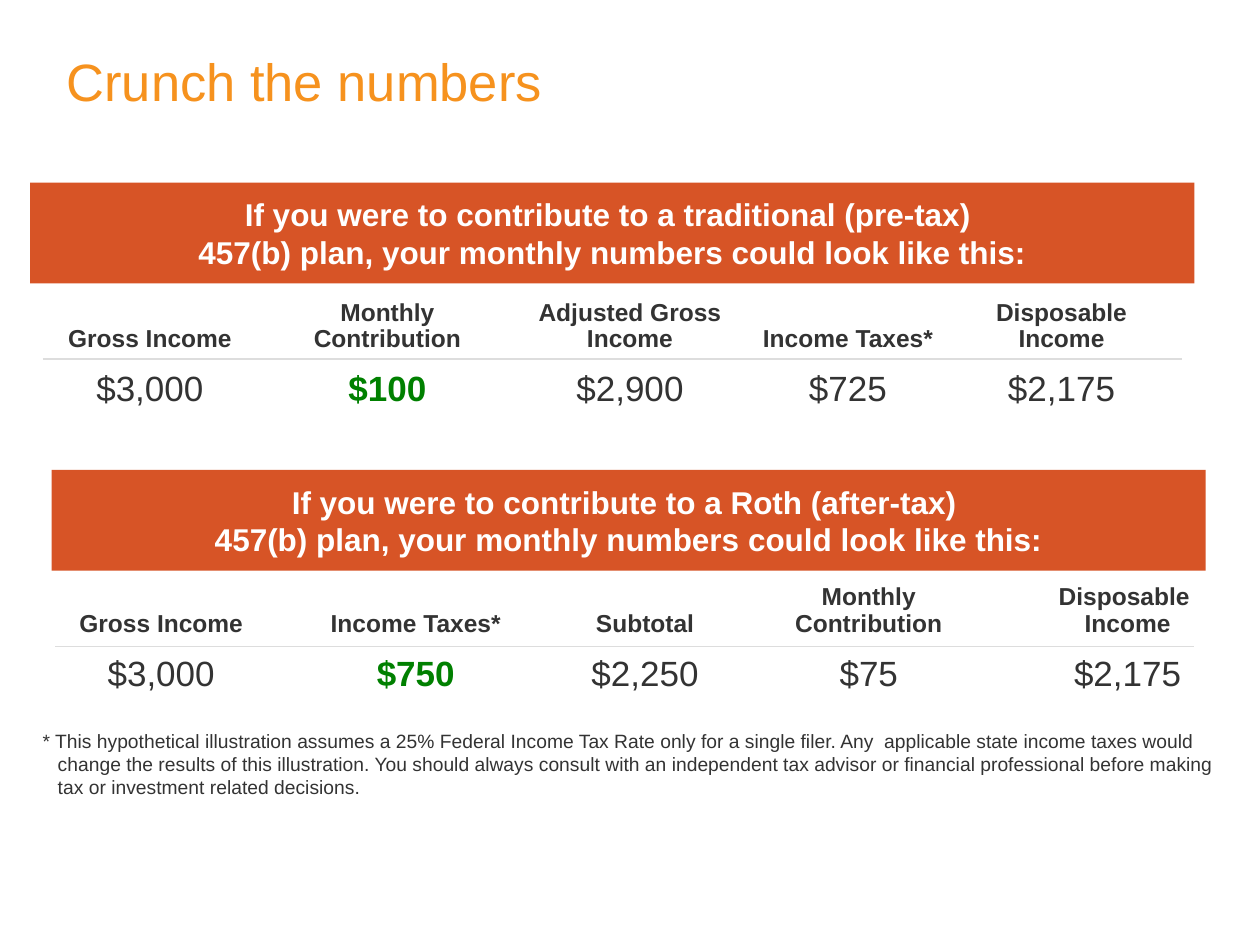
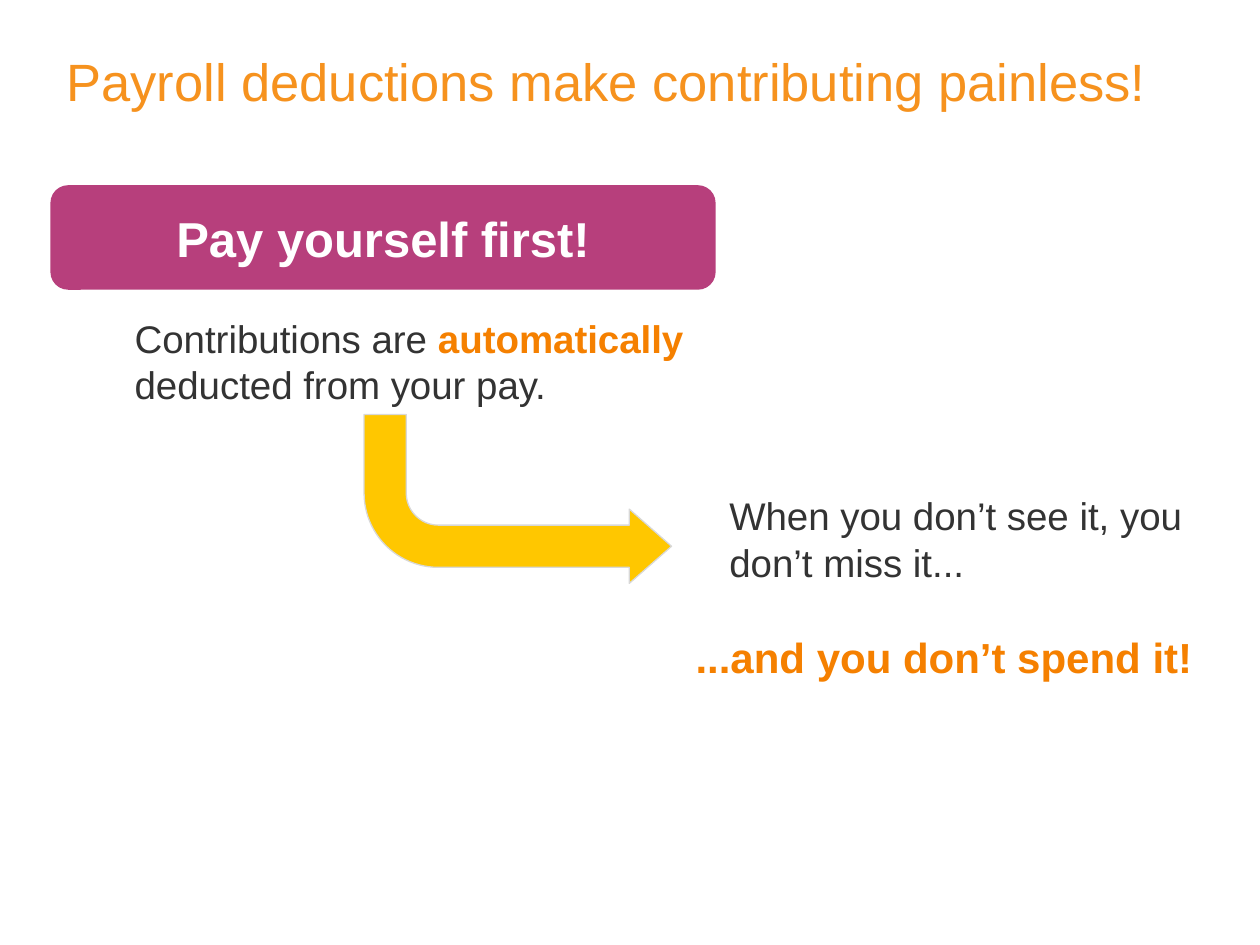
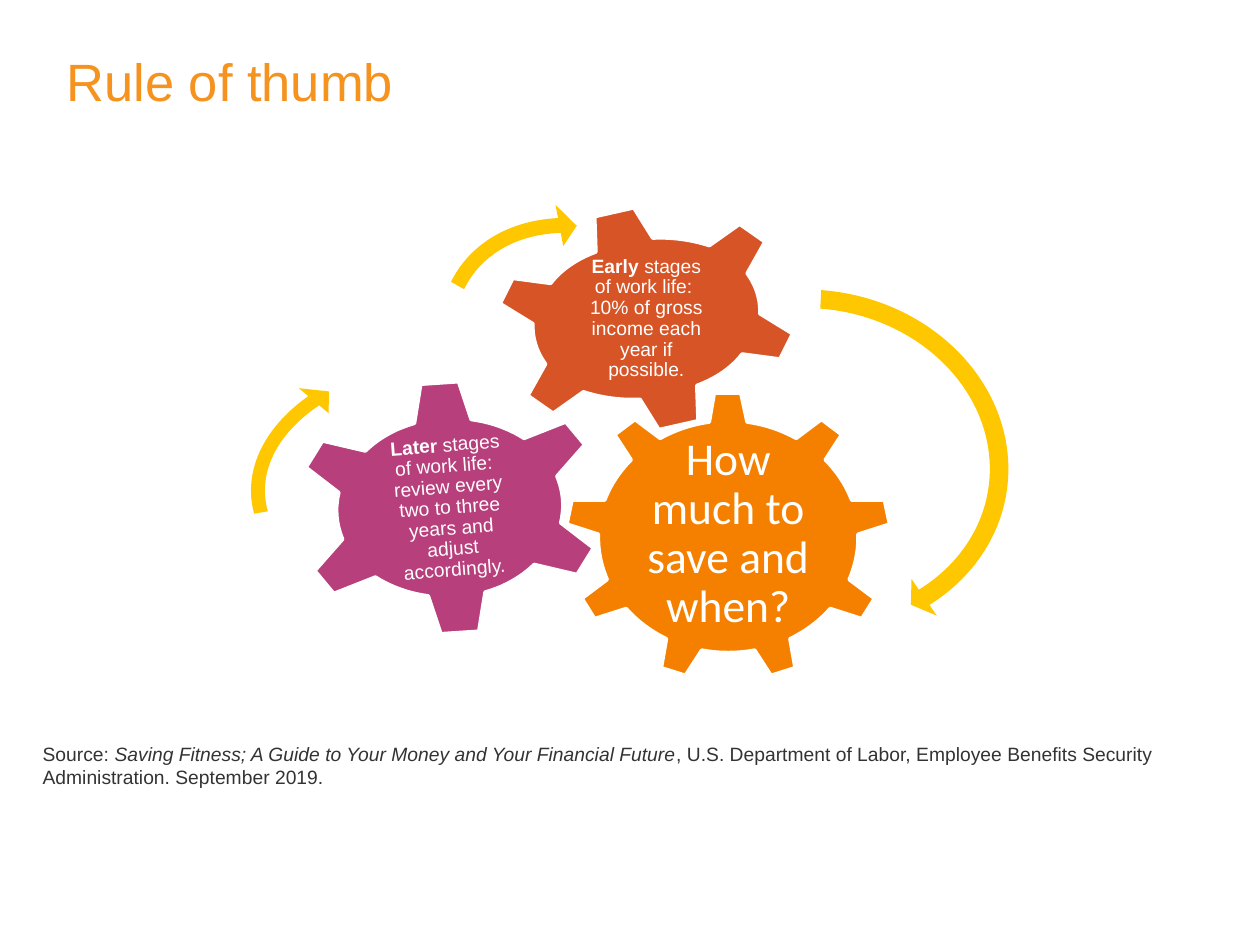
from dataclasses import dataclass
from math import atan2, cos, hypot, pi, radians, sin
from typing import NamedTuple

from lxml.etree import SubElement
from pptx import Presentation
from pptx.dml.color import RGBColor
from pptx.enum.shapes import MSO_CONNECTOR, MSO_SHAPE
from pptx.enum.text import MSO_ANCHOR, PP_ALIGN
from pptx.oxml.ns import qn
from pptx.shapes.autoshape import Shape
from pptx.slide import Slide
from pptx.util import Inches, Pt

TITLE_ORANGE = "F6921E"
ORANGE = "F58000"
RUST = "D75426"
MAGENTA = "B73F7C"
YELLOW = "FFC700"
GREEN = "008000"
CHARCOAL = "333333"
WHITE = "FFFFFF"
RULE_GRAY = "DDDDDD"
ARROW_EDGE = "D8D8D8"

BODY = {"name": "Arial", "size": Pt(22), "color": CHARCOAL}
TITLE = BODY | {"size": Pt(30), "color": TITLE_ORANGE}
BANNER = BODY | {"size": Pt(18), "bold": True, "color": WHITE}
CALLOUT = BANNER | {"size": Pt(28)}
HEADING = BODY | {"size": Pt(14), "bold": True}
AMOUNT = BODY | {"size": Pt(20)}
NOTE = BODY | {"size": Pt(11)}
GEAR_NOTE = NOTE | {"color": WHITE}
GEAR_QUESTION = GEAR_NOTE | {"name": "Calibri", "size": Pt(26)}
EMPHASIS = {"bold": True, "color": ORANGE}

CENTERED = {"alignment": PP_ALIGN.CENTER}
CENTERED_TIGHT = CENTERED | {"line_spacing": 0.9}
MIDDLE = {"vertical_anchor": MSO_ANCHOR.MIDDLE}
EVEN_MARGINS = {
    f"margin_{side}": Inches(0.1) for side in ("left", "top", "right", "bottom")
}

Point = tuple[float, float]
Tooth = list[Point]


class Box(NamedTuple):
    """A place on the slide in inches."""

    left: float
    top: float
    width: float
    height: float

    def lengths(self) -> list[int]:
        """Return the four measures as lengths."""
        return [Inches(value) for value in self]


class Span(NamedTuple):
    """A piece of text and what sets its format apart."""

    text: str
    changes: dict = {}


@dataclass
class Column:
    """One income figure with its heading."""

    heading: str
    amount: str
    heading_lines: int = 1
    highlighted: bool = False


@dataclass
class IncomePanel:
    """A banner above a row of income figures."""

    banner_text: str
    banner: Box
    edges: list[float]
    amount_top: float
    rule_left: float
    rule_top: float
    columns: list[Column]


@dataclass
class Gear:
    """A toothed wheel with text in its middle."""

    center: Point
    radii: Point
    teeth: list[Tooth]
    fill: str
    text_width: float
    spans: list[Span]
    text_format: dict
    tilt: float = 0


@dataclass
class TurnArrow:
    """A circular arrow beside a gear."""

    box: Box
    rotation: float
    adjustments: list[float]


def rgb(color: str) -> RGBColor:
    """Turn a hex string into a colour."""
    return RGBColor.from_string(color)


def set_values(target: object, values: dict) -> None:
    """Set each named attribute of the target."""
    for name, value in values.items():
        if name == "color":
            target.color.rgb = rgb(value)
        else:
            setattr(target, name, value)


def write(shape: Shape, spans: list[Span], text_format: dict,
          layout: dict = {}, frame: dict = {}) -> None:
    """Fill a shape with formatted spans in one paragraph."""
    set_values(shape.text_frame, {"word_wrap": True} | frame)
    paragraph = shape.text_frame.paragraphs[0]
    set_values(paragraph, layout)
    for span in spans:
        for number, line in enumerate(span.text.split("\n")):
            if number:
                paragraph.add_line_break()
            run = paragraph.add_run()
            run.text = line
            set_values(run.font, text_format | span.changes)


def add_text(slide: Slide, box: Box, spans: list[Span], text_format: dict,
             layout: dict = {}, frame: dict = {}) -> Shape:
    """Add a text box."""
    shape = slide.shapes.add_textbox(*box.lengths())
    write(shape, spans, text_format, layout, frame)
    return shape


def paint(shape: Shape, fill: str, line: str = "", line_width: float = 0.75) -> None:
    """Give a shape a flat fill and an optional line."""
    shape.shadow.inherit = False
    shape.fill.solid()
    shape.fill.fore_color.rgb = rgb(fill)
    if line:
        shape.line.color.rgb = rgb(line)
        shape.line.width = Pt(line_width)
    else:
        shape.line.fill.background()


def add_preset(slide: Slide, kind: MSO_SHAPE, box: Box, fill: str, line: str = "",
               adjustments: list[float] = [], rotation: float = 0) -> Shape:
    """Add a painted preset shape."""
    shape = slide.shapes.add_shape(kind, *box.lengths())
    paint(shape, fill, line)
    shape.rotation = rotation
    for index, value in enumerate(adjustments):
        shape.adjustments[index] = value
    return shape


def add_titled_slide(presentation: Presentation, title: str) -> Slide:
    """Add a blank slide with the shared title style."""
    slide = presentation.slides.add_slide(presentation.slide_layouts[6])
    add_text(slide, Box(0.43, 0.25, 9, 0.78), [Span(title)], TITLE, frame=MIDDLE)
    return slide


def add_rule(slide: Slide, left: float, top: float) -> None:
    """Add the thin line between headings and amounts."""
    ends = [Inches(value) for value in (left, top, left + 9.04, top)]
    rule = slide.shapes.add_connector(MSO_CONNECTOR.STRAIGHT, *ends)
    rule.line.color.rgb = rgb(RULE_GRAY)
    rule.line.width = Pt(0.75)
    SubElement(rule._element.spPr, qn("a:effectLst"))


def add_income_panel(slide: Slide, panel: IncomePanel) -> None:
    """Draw a banner with its headings, rule and amounts."""
    banner = add_preset(slide, MSO_SHAPE.RECTANGLE, panel.banner, RUST)
    write(banner, [Span(panel.banner_text)], BANNER, CENTERED,
          EVEN_MARGINS | {"vertical_anchor": MSO_ANCHOR.TOP})
    for column, left, right in zip(panel.columns, panel.edges, panel.edges[1:]):
        width = right - left
        heading_height = 0.15 + 0.21 * column.heading_lines
        heading_box = Box(left, panel.amount_top - heading_height, width, heading_height)
        add_text(slide, heading_box, [Span(column.heading)], HEADING,
                 CENTERED_TIGHT, EVEN_MARGINS)
        changes = {"bold": True, "color": GREEN} if column.highlighted else {}
        add_text(slide, Box(left, panel.amount_top, width, 0.54),
                 [Span(column.amount, changes)], AMOUNT, CENTERED_TIGHT, EVEN_MARGINS)
    add_rule(slide, panel.rule_left, panel.rule_top)


def with_opposites(teeth: list[Tooth], center: Point) -> list[Tooth]:
    """Add the same teeth turned half way round the centre."""
    x, y = center
    return teeth + [[(2 * x - px, 2 * y - py) for px, py in tooth] for tooth in teeth]


def with_mirrored(top: Tooth, right: list[Tooth], center: Point) -> list[Tooth]:
    """Add the right-hand teeth mirrored to the left."""
    x = center[0]
    left = [[(2 * x - px, py) for px, py in reversed(tooth)] for tooth in reversed(right)]
    return [top, *right, *left]


def rim(gear: Gear, start: Point, end: Point, steps: int = 10) -> list[Point]:
    """Return points along the gear body between two teeth."""
    (x, y), (radius_x, radius_y) = gear.center, gear.radii
    scaled = [((px - x) / radius_x, (py - y) / radius_y) for px, py in (start, end)]
    first, last = (atan2(py, px) for px, py in scaled)
    sweep = (last - first) % (2 * pi)
    near, far = (hypot(*point) for point in scaled)
    points = []
    for step in range(1, steps):
        share = step / steps
        reach = near + (far - near) * share
        angle = first + sweep * share
        points.append((x + radius_x * reach * cos(angle), y + radius_y * reach * sin(angle)))
    return points


def turn(point: Point, center: Point, degrees: float) -> Point:
    """Turn a point round a centre."""
    across, down = point[0] - center[0], point[1] - center[1]
    cosine, sine = cos(radians(degrees)), sin(radians(degrees))
    return (center[0] + across * cosine - down * sine,
            center[1] + across * sine + down * cosine)


def add_gear(slide: Slide, gear: Gear) -> None:
    """Draw a gear and its text."""
    outline = []
    for tooth, following in zip(gear.teeth, gear.teeth[1:] + gear.teeth[:1]):
        outline += tooth + rim(gear, tooth[-1], following[0])
    level = [turn(point, gear.center, -gear.tilt) for point in outline]
    vertices = [(Inches(x), Inches(y)) for x, y in level]
    builder = slide.shapes.build_freeform(*vertices[0])
    builder.add_line_segments(vertices[1:], close=True)
    shape = builder.convert_to_shape()
    paint(shape, gear.fill, WHITE, 2)
    shape.rotation = gear.tilt
    side = (shape.width - Inches(gear.text_width)) // 2
    margins = {"margin_left": side, "margin_right": side,
               "margin_top": 0, "margin_bottom": 0}
    write(shape, gear.spans, gear.text_format, CENTERED_TIGHT, MIDDLE | margins)


def build_numbers(presentation: Presentation) -> None:
    """Build the slide that compares the two plans."""
    slide = add_titled_slide(presentation, "Crunch the numbers")
    promise = "457(b) plan, your monthly numbers could look like this:"
    panels = [
        IncomePanel(
            f"If you were to contribute to a traditional (pre-tax) \n{promise}",
            Box(0.24, 1.45, 9.24, 0.8), [0.29, 2.09, 4.06, 5.94, 7.52, 9.33],
            2.85, 0.34, 2.85,
            [Column("Gross Income", "$3,000"),
             Column("Monthly Contribution", "$100", 2, True),
             Column("Adjusted Gross Income", "$2,900", 2),
             Column("Income Taxes*", "$725"),
             Column("Disposable Income", "$2,175", 2)]),
        IncomePanel(
            f"If you were to contribute to a Roth (after-tax) \n{promise}",
            Box(0.41, 3.73, 9.16, 0.8), [0.31, 2.25, 4.35, 5.89, 7.9, 10],
            5.11, 0.44, 5.13,
            [Column("Gross Income", "$3,000"),
             Column("Income Taxes*", "$750", 1, True),
             Column("Subtotal", "$2,250"),
             Column("Monthly Contribution", "$75", 2),
             Column("Disposable \nIncome", "$2,175", 2)]),
    ]
    for panel in panels:
        add_income_panel(slide, panel)
    footnote = add_text(slide, Box(0.24, 5.74, 9.6, 0.66), [Span(
        "* This hypothetical illustration assumes a 25% Federal Income Tax Rate only "
        "for a single filer. Any  applicable state income taxes would change the "
        "results of this illustration. You should always consult with an independent "
        "tax advisor or financial professional before making tax or investment "
        "related decisions.")], NOTE)
    properties = footnote.text_frame.paragraphs[0]._p.get_or_add_pPr()
    for name, indent in {"marL": 0.12, "indent": -0.12}.items():
        properties.set(name, str(Inches(indent)))


def build_payroll(presentation: Presentation) -> None:
    """Build the slide on payroll deductions."""
    slide = add_titled_slide(presentation, "Payroll deductions make contributing painless!")
    callout = add_preset(slide, MSO_SHAPE.ROUNDED_RECTANGLE, Box(0.4, 1.47, 5.28, 0.83),
                         MAGENTA, adjustments=[0.17])
    write(callout, [Span("Pay yourself first!")], CALLOUT, CENTERED,
          EVEN_MARGINS | MIDDLE | {"word_wrap": False})
    add_text(slide, Box(0.97, 2.45, 5.18, 0.83),
             [Span("Contributions are "), Span("automatically ", EMPHASIS),
              Span("deducted from your pay.")], BODY)
    arrow = add_preset(slide, MSO_SHAPE.BENT_ARROW, Box(2.89, 3.29, 2.44, 1.34), YELLOW,
                       ARROW_EDGE, [0.25, 0.22, 0.25, 0.44], 180)
    arrow._element.spPr.get_or_add_xfrm().set("flipH", "1")
    add_text(slide, Box(5.69, 3.86, 4.31, 0.83),
             [Span("When you don’t see it, you don’t miss it...")], BODY)
    add_text(slide, Box(5.33, 4.96, 4.47, 0.5), [Span(" ...and you don’t spend it!")],
             BODY | EMPHASIS | {"size": Pt(24)})


def build_rule_of_thumb(presentation: Presentation) -> None:
    """Build the slide with the three savings gears."""
    slide = add_titled_slide(presentation, "Rule of thumb")
    add_text(slide, Box(0.24, 5.84, 9.44, 0.47), [
        Span("Source: "),
        Span("Saving Fitness; A Guide to Your Money and Your Financial Future",
             {"italic": True}),
        Span(", U.S. Department of Labor, Employee Benefits Security Administration. "
             "September 2019.")], NOTE)
    question_center, later_center, early_center = (5.78, 4.26), (3.57, 4.03), (5.13, 2.53)
    question_teeth = with_mirrored(
        [(5.63, 3.35), (5.67, 3.12), (5.88, 3.12), (5.93, 3.35)],
        [[(6.32, 3.48), (6.52, 3.33), (6.68, 3.45), (6.55, 3.65)],
         [(6.76, 3.97), (7.02, 3.97), (7.06, 4.16), (6.81, 4.24)],
         [(6.74, 4.6), (6.94, 4.75), (6.84, 4.91), (6.59, 4.83)],
         [(6.27, 5.07), (6.31, 5.3), (6.12, 5.36), (5.99, 5.16)]], question_center)
    later_teeth = with_opposites(
        [[(4.16, 3.48), (4.49, 3.35), (4.64, 3.53), (4.42, 3.78)],
         [(4.45, 4.15), (4.71, 4.35), (4.58, 4.56), (4.24, 4.48)],
         [(3.85, 4.7), (3.8, 5.01), (3.5, 5.03), (3.4, 4.73)]], later_center)
    early_teeth = with_opposites(
        [[(5.63, 1.95), (5.87, 1.78), (6.07, 1.92), (5.93, 2.17)],
         [(6.03, 2.49), (6.29, 2.65), (6.19, 2.85), (5.89, 2.81)],
         [(5.53, 3.06), (5.54, 3.34), (5.23, 3.41), (5.08, 3.17)]], early_center)
    gears = [
        Gear(question_center, (1.02, 0.91), question_teeth, ORANGE, 1.29,
             [Span("How much to save and when?")], GEAR_QUESTION),
        Gear(later_center, (0.88, 0.7), later_teeth, MAGENTA, 1.01,
             [Span("Later", {"bold": True}),
              Span(" stages of work life:  review every two to three years and "
                   "adjust accordingly.")], GEAR_NOTE, -4.5),
        Gear(early_center, (0.89, 0.63), early_teeth, RUST, 1.01,
             [Span("Early", {"bold": True}),
              Span(" stages of work life:  10% of gross income each year if "
                   "possible.")], GEAR_NOTE),
    ]
    for gear in gears:
        add_gear(slide, gear)
    short_turn = [0.05, 3.94, 131.09, 105.08, 0.07]
    arrows = [
        TurnArrow(Box(4.79, 2.2, 3.32, 2.94), 8.5, [0.05, 2.99, 25.16, 158.61, 0.06]),
        TurnArrow(Box(3.29, 1.73, 3, 2.38), 34.3, short_turn),
        TurnArrow(Box(1.89, 2.72, 3.15, 2.21), 355, short_turn),
    ]
    for arrow in arrows:
        add_preset(slide, MSO_SHAPE.CIRCULAR_ARROW, arrow.box, YELLOW,
                   adjustments=arrow.adjustments, rotation=arrow.rotation)


def main() -> None:
    """Build and save the presentation."""
    presentation = Presentation()
    presentation.slide_width = Inches(10)
    presentation.slide_height = Inches(7.5)
    for build in (build_numbers, build_payroll, build_rule_of_thumb):
        build(presentation)
    presentation.save("out.pptx")


if __name__ == "__main__":
    main()
